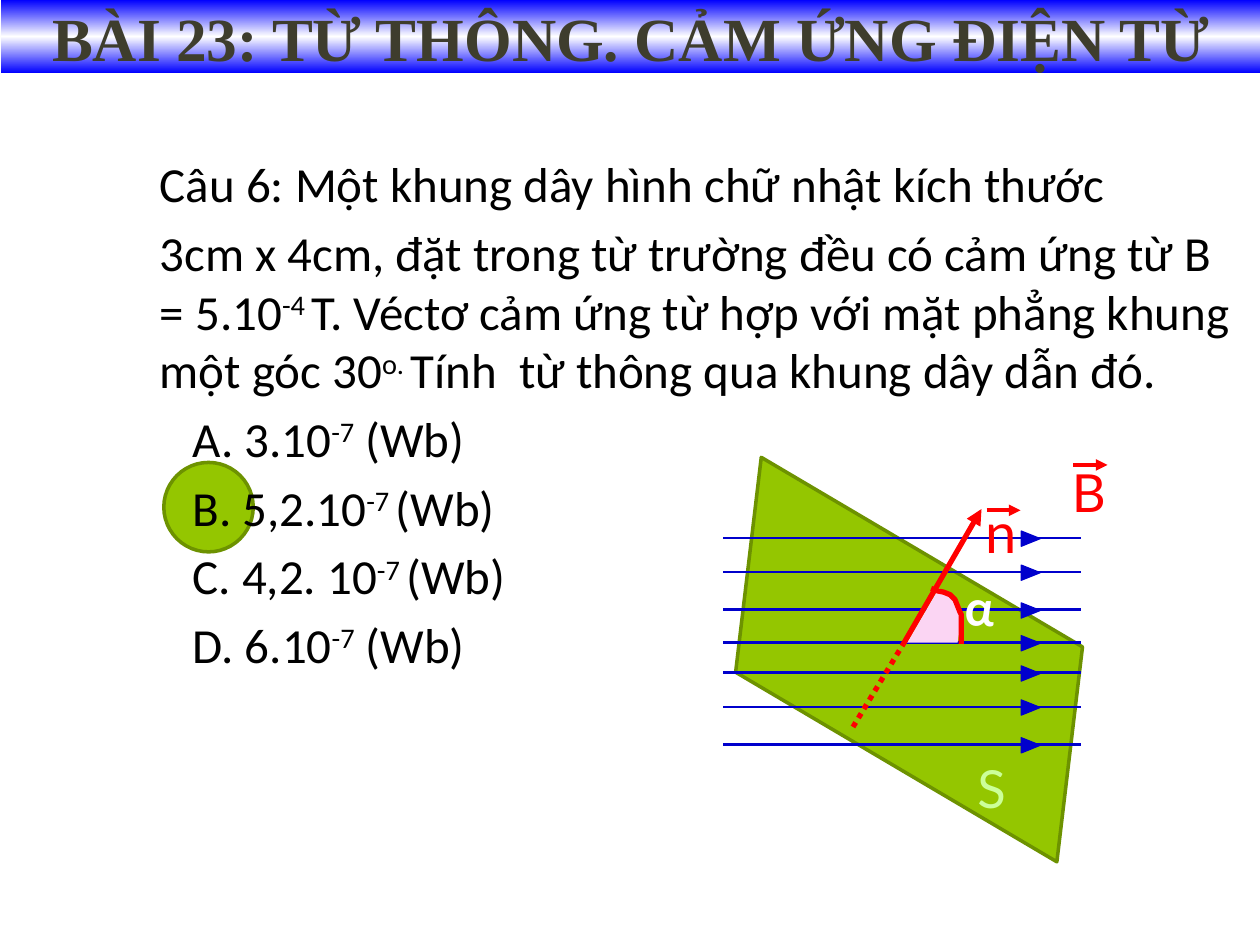
from copy import deepcopy
from dataclasses import dataclass

from lxml import etree
from pptx import Presentation
from pptx import util as u
from pptx.dml.color import RGBColor
from pptx.enum import dml, shapes, text
from pptx.oxml.ns import qn


@dataclass(frozen=True)
class Theme:
    ink: str = "000000"
    title: str = "3E3D2D"
    white: str = "FFFFFF"
    bar: str = "0000FF"
    leaf: str = "94C600"
    leaf_edge: str = "6D9200"
    field: str = "0000CC"
    vector: str = "FF0000"
    sector: str = "FBD5F3"
    area: str = "CCFF99"
    title_font: str = "Times New Roman"
    body_font: str = "Calibri"
    label_font: str = "Lato"
    title_size: int = 35
    body_size: int = 28
    label_size: int = 30
    normal_size: int = 32


@dataclass(frozen=True)
class FieldLine:
    y: float
    left_end: float
    right_start: float


@dataclass(frozen=True)
class Stroke:
    start: tuple[float, float]
    end: tuple[float, float]
    color: str
    width: float
    arrow: bool = False
    dotted: bool = False


@dataclass(frozen=True)
class Label:
    wording: str
    area: tuple[float, float, float, float]
    color: str
    size: int
    bold: bool = False
    rotation: float = 0


@dataclass(frozen=True)
class Line:
    pieces: tuple[str, ...]
    indent: float = 0


THEME = Theme()
FIELD_LEFT, FIELD_RIGHT, ARROW_X = 5.74, 8.58, 8.12
FIELD = [
    FieldLine(4.27, 6.61, 6.54), FieldLine(4.54, 6.83, 6.73),
    FieldLine(4.84, 7.01, 6.94), FieldLine(5.1, 7.16, 7.16),
    FieldLine(5.34, 7.37, 7.31), FieldLine(5.61, 7.58, 7.49),
    FieldLine(5.91, 7.78, 7.7),
]
VECTORS = [
    Stroke((6.77, 5.77), (7.17, 5.11), THEME.vector, 3, dotted=True),
    Stroke((7.17, 5.11), (7.79, 4.04), THEME.vector, 3, arrow=True),
    Stroke((8.52, 3.69), (8.79, 3.69), THEME.vector, 2.25, arrow=True),
    Stroke((7.83, 4.05), (8.1, 4.05), THEME.vector, 2.25, arrow=True),
]
LABELS = [
    Label("B", (8.41, 3.6, 0.5, 0.6), THEME.vector, THEME.label_size),
    Label("α", (7.56, 4.53, 0.46, 0.62), THEME.white, THEME.body_size, True, 2.9),
    Label("n", (7.72, 3.9, 0.46, 0.63), THEME.vector, THEME.normal_size),
    Label("S", (7.66, 5.95, 0.5, 0.6), THEME.area, THEME.label_size),
]
SECTOR = [(7.45, 4.67), (7.5, 4.69), (7.54, 4.72), (7.59, 4.81),
          (7.61, 4.88), (7.62, 4.97), (7.6, 5.1), (7.2, 5.1)]
ANGLE_ARC = [(7.39, 4.67), (7.44, 4.69), (7.49, 4.7), (7.54, 4.72), (7.58, 4.76),
             (7.6, 4.81), (7.62, 4.86), (7.63, 4.88), (7.63, 5.11)]
QUESTION = [
    Line(("Câu 6: Một khung dây hình chữ nhật kích thước",)),
    Line(("3cm x 4cm, đặt trong từ trường đều có cảm ứng từ B = 5.10", "-4 ",
          "T. Véctơ cảm ứng từ hợp với mặt phẳng khung một góc 30", "o. ",
          "Tính  từ thông qua khung dây dẫn đó.")),
    Line(("A. 3.10", "-7", " (Wb)"), 0.26),
    Line(("B. 5,2.10", "-7 ", "(Wb)"), 0.26),
    Line(("C. 4,2. 10", "-7 ", "(Wb)"), 0.26),
    Line(("D. 6.10", "-7", " (Wb)"), 0.26),
]


def rgb(color: str) -> RGBColor:
    return RGBColor.from_string(color)


def inches(values) -> list:
    return [u.Inches(value) for value in values]


def style_font(font, name: str, size: float, color: str, bold: bool = False) -> None:
    font.name, font.size, font.bold = name, u.Pt(size), bold
    font.color.rgb = rgb(color)


def paint(shape, fill: str | None, edge: str | None = None, width: float = 0) -> None:
    shape.shadow.inherit = False
    if fill:
        shape.fill.solid()
        shape.fill.fore_color.rgb = rgb(fill)
    else:
        shape.fill.background()
    if edge:
        shape.line.color.rgb, shape.line.width = rgb(edge), u.Pt(width)
    else:
        shape.line.fill.background()


def add_preset(canvas, kind, area, fill: str, edge: str, width: float, rotation: float = 0):
    shape = canvas.add_shape(kind, *inches(area))
    paint(shape, fill, edge, width)
    shape.rotation = rotation
    return shape


def add_stroke(canvas, stroke: Stroke) -> None:
    line = canvas.add_connector(shapes.MSO_CONNECTOR.STRAIGHT,
                                *inches(stroke.start + stroke.end))
    line.line.color.rgb, line.line.width = rgb(stroke.color), u.Pt(stroke.width)
    if stroke.dotted:
        line.line.dash_style = dml.MSO_LINE.ROUND_DOT
    properties = line._element.spPr
    if stroke.arrow:
        etree.SubElement(properties.find(qn("a:ln")), qn("a:tailEnd"), type="triangle")
    etree.SubElement(properties, qn("a:effectLst"))


def add_outline(canvas, points, closed: bool, fill=None, edge=None, width: float = 0) -> None:
    start, *rest = [tuple(inches(point)) for point in points]
    builder = canvas.build_freeform(*start)
    builder.add_line_segments(rest, close=closed)
    paint(builder.convert_to_shape(), fill, edge, width)


def add_label(canvas, label: Label) -> None:
    box = canvas.add_textbox(*inches(label.area))
    box.rotation = label.rotation
    box.text_frame.word_wrap = False
    box.text_frame.auto_size = text.MSO_AUTO_SIZE.SHAPE_TO_FIT_TEXT
    para = box.text_frame.paragraphs[0]
    para.text = label.wording
    style_font(para.font, THEME.label_font, label.size, label.color, label.bold)


def add_question(canvas) -> None:
    box = canvas.add_textbox(*inches((1.17, 1.17, 8.75, 5.58)))
    frame = box.text_frame
    frame.word_wrap = True
    for index, line in enumerate(QUESTION):
        para = frame.add_paragraph() if index else frame.paragraphs[0]
        para.space_before = u.Pt(0.2 * THEME.body_size)
        para._p.get_or_add_pPr().set("marL", str(u.Inches(line.indent)))
        style_font(para.font, THEME.body_font, THEME.body_size, THEME.ink)
        for position, piece in enumerate(line.pieces):
            span = para.add_run()
            span.text = piece
            if position % 2:
                span.font._element.set("baseline", "30000")


def add_diagram(canvas) -> None:
    add_preset(canvas, shapes.MSO_SHAPE.PARALLELOGRAM, (5.76, 3.88, 2.91, 2.71),
               THEME.leaf, THEME.leaf_edge, 2, 96.8).adjustments[0] = 0.44
    for row in FIELD:
        for start, end in ((row.left_end, FIELD_LEFT), (row.right_start, FIELD_RIGHT)):
            add_stroke(canvas, Stroke((start, row.y), (end, row.y), THEME.field, 1.5))
        add_preset(canvas, shapes.MSO_SHAPE.ISOSCELES_TRIANGLE,
                   (ARROW_X, row.y - 0.07, 0.12, 0.15), THEME.field, THEME.field, 0.75, 90)
    add_outline(canvas, SECTOR, True, fill=THEME.sector)
    add_outline(canvas, ANGLE_ARC, False, edge=THEME.vector, width=3)
    for stroke in VECTORS:
        add_stroke(canvas, stroke)
    for label in LABELS:
        add_label(canvas, label)


def add_title(canvas) -> None:
    bar = canvas.add_shape(shapes.MSO_SHAPE.RECTANGLE, *inches((0.01, 0, 10, 0.58)))
    paint(bar, None)
    bar.fill.gradient()
    bar.fill.gradient_angle = 90
    first = bar._element.spPr.find(qn("a:gradFill")).find(qn("a:gsLst"))[0]
    middle = deepcopy(first)
    middle.set("pos", "50000")
    first.addnext(middle)
    for stop, color in zip(bar.fill.gradient_stops, (THEME.bar, THEME.white, THEME.bar)):
        stop.color.rgb = rgb(color)
    bar.text_frame.vertical_anchor = text.MSO_ANCHOR.MIDDLE
    para = bar.text_frame.paragraphs[0]
    para.text = "BÀI 23: TỪ THÔNG. CẢM ỨNG ĐIỆN TỪ"
    para.alignment = text.PP_ALIGN.CENTER
    style_font(para.font, THEME.title_font, THEME.title_size, THEME.title, True)


def main() -> None:
    """Build the magnetic flux question slide."""
    deck = Presentation()
    deck.slide_width, deck.slide_height = inches((10, 7.5))
    page = deck.slides.add_slide(deck.slide_layouts[6])
    add_preset(page.shapes, shapes.MSO_SHAPE.OVAL, (1.3, 3.67, 0.71, 0.71),
               THEME.leaf, THEME.leaf_edge, 2)
    add_question(page.shapes)
    add_diagram(page.shapes.add_group_shape().shapes)
    add_title(page.shapes)
    deck.save("out.pptx")


if __name__ == "__main__":
    main()
